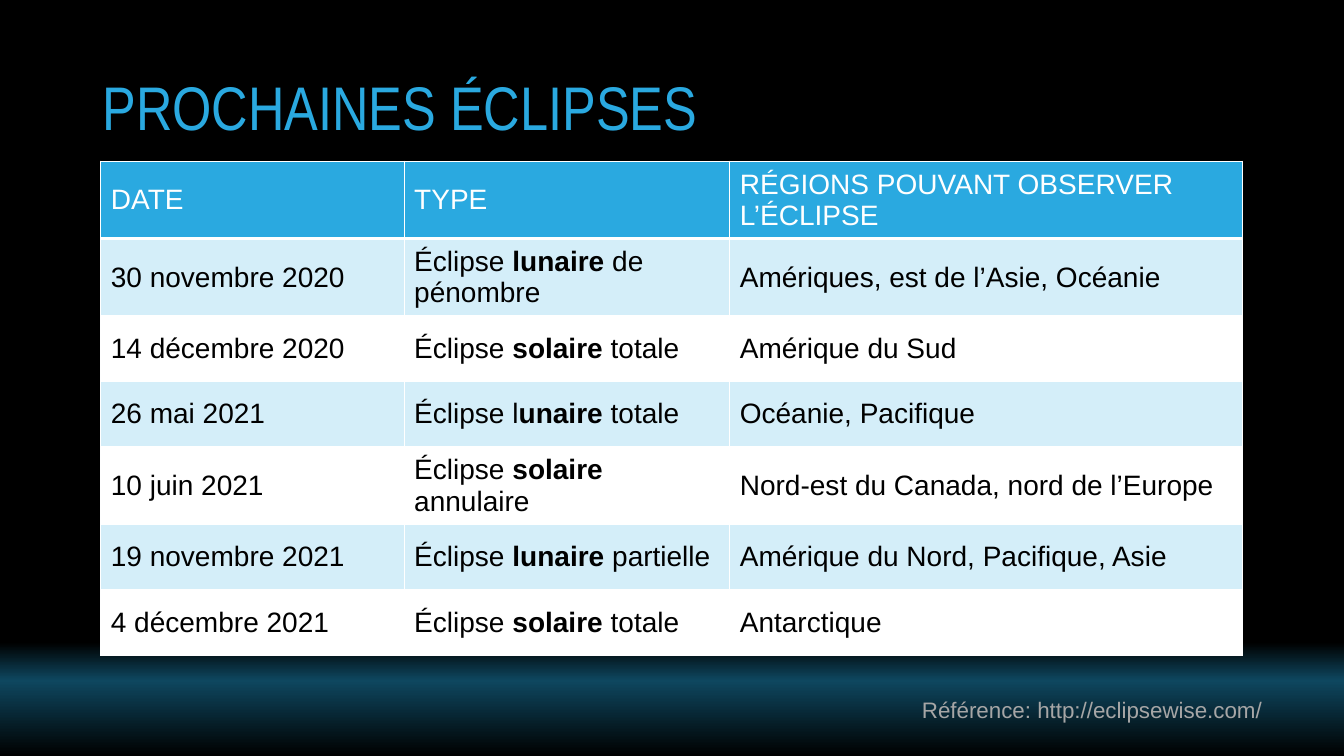
import copy

import pptx
import pptx.dml.color
import pptx.enum.text
import pptx.oxml
import pptx.oxml.ns
import pptx.util

Pt = pptx.util.Pt
RGBColor = pptx.dml.color.RGBColor
PP_ALIGN = pptx.enum.text.PP_ALIGN
MSO_ANCHOR = pptx.enum.text.MSO_ANCHOR
MSO_AUTO_SIZE = pptx.enum.text.MSO_AUTO_SIZE

BLACK = RGBColor(0x00, 0x00, 0x00)
WHITE = RGBColor(0xFF, 0xFF, 0xFF)
NIGHT_BLUE = RGBColor(0x0E, 0x47, 0x5F)
SKY_BLUE = RGBColor(0x2A, 0xA9, 0xE0)
PALE_BLUE = RGBColor(0xD4, 0xEE, 0xF9)
GREY = RGBColor(0xA6, 0xA6, 0xA6)

HORIZON = [(0.85, BLACK), (0.9, NIGHT_BLUE), (1, BLACK)]
COLUMN_WIDTHS = [216.7, 232.6, 366.5]
ROW_HEIGHTS = [32.4] * 2 + [46.8] * 5

# Asterisks enclose the bold part of a cell.
ECLIPSES = [
    ("DATE", "TYPE", "RÉGIONS POUVANT OBSERVER L’ÉCLIPSE"),
    ("30 novembre 2020", "Éclipse *lunaire* de pénombre", "Amériques, est de l’Asie, Océanie"),
    ("14 décembre 2020", "Éclipse *solaire* totale", "Amérique du Sud"),
    ("26 mai 2021", "Éclipse l*unaire* totale", "Océanie, Pacifique"),
    ("10 juin 2021", "Éclipse *solaire* annulaire", "Nord-est du Canada, nord de l’Europe"),
    ("19 novembre 2021", "Éclipse *lunaire* partielle", "Amérique du Nord, Pacifique, Asie"),
    ("4 décembre 2021", "Éclipse *solaire* totale", "Antarctique"),
]


class SlideBuilder:
    """Holds the fonts and the slide being filled."""

    title_font = "Arial Narrow"
    text_font = "Arial"

    def __init__(self, slide):
        self.slide = slide

    def style(self, run, size, color, name=None, bold=False):
        run.font.name = name or self.text_font
        run.font.size = Pt(size)
        run.font.bold = bold
        run.font.color.rgb = color

    def background(self, stops):
        """Fill the background from top to bottom with (position, colour) stops."""
        fill = self.slide.background.fill
        fill.gradient()
        fill.gradient_angle = 270
        stop_list = self.slide.element.xpath(".//a:gsLst")[0]
        while len(stop_list) < len(stops):
            stop_list.append(copy.deepcopy(stop_list[0]))
        for stop, (position, color) in zip(fill.gradient_stops, stops):
            stop.position = position
            stop.color.rgb = color

    def title(self, text, left, top, width, height):
        shape = self.slide.shapes.title
        shape.left, shape.top = Pt(left), Pt(top)
        shape.width, shape.height = Pt(width), Pt(height)
        frame = shape.text_frame
        frame.text = text
        frame.auto_size = MSO_AUTO_SIZE.NONE
        frame.vertical_anchor = MSO_ANCHOR.MIDDLE
        paragraph = frame.paragraphs[0]
        paragraph.alignment = PP_ALIGN.LEFT
        paragraph.line_spacing = 0.9
        self.style(paragraph.runs[0], 44, SKY_BLUE, self.title_font)

    def reference(self, text, left, top, width, height):
        shape = self.slide.shapes.add_textbox(Pt(left), Pt(top), Pt(width), Pt(height))
        frame = shape.text_frame
        frame.word_wrap = True
        frame.text = text
        paragraph = frame.paragraphs[0]
        paragraph.alignment = PP_ALIGN.RIGHT
        self.style(paragraph.runs[0], 16, GREY)

    def table(self, rows, left, top, column_widths, row_heights):
        shape = self.slide.shapes.add_table(
            len(rows), len(column_widths), Pt(left), Pt(top),
            Pt(sum(column_widths)), Pt(sum(row_heights)))
        table = shape.table
        for column, width in zip(table.columns, column_widths):
            column.width = Pt(width)
        for row, height in zip(table.rows, row_heights):
            row.height = Pt(height)
        for row_index, texts in enumerate(rows):
            header = row_index == 0
            band = PALE_BLUE if row_index % 2 else WHITE
            for column_index, text in enumerate(texts):
                cell = table.cell(row_index, column_index)
                self.cell_text(cell, text, WHITE if header else BLACK)
                self.cell_borders(cell, bottom_width=3 if header else 1)
                cell.fill.solid()
                cell.fill.fore_color.rgb = SKY_BLUE if header else band

    def cell_text(self, cell, text, color):
        cell.vertical_anchor = MSO_ANCHOR.MIDDLE
        paragraph = cell.text_frame.paragraphs[0]
        for index, part in enumerate(text.split("*")):
            run = paragraph.add_run()
            run.text = part
            self.style(run, 20, color, bold=index % 2 == 1)

    def cell_borders(self, cell, bottom_width):
        properties = cell._tc.get_or_add_tcPr()
        for side, width in (("L", 1), ("R", 1), ("T", 1), ("B", bottom_width)):
            properties.append(pptx.oxml.parse_xml(
                f'<a:ln{side} {pptx.oxml.ns.nsdecls("a")} w="{Pt(width)}">'
                f'<a:solidFill><a:srgbClr val="{WHITE}"/></a:solidFill></a:ln{side}>'))


def main():
    presentation = pptx.Presentation()
    presentation.slide_width, presentation.slide_height = Pt(960), Pt(540)
    title_only = presentation.slide_layouts[5]
    builder = SlideBuilder(presentation.slides.add_slide(title_only))
    builder.background(HORIZON)
    builder.title("PROCHAINES ÉCLIPSES", 66, 26.6, 828, 104.4)
    builder.reference("Référence: http://eclipsewise.com/", 229, 494, 679.6, 39.6)
    builder.table(ECLIPSES, 72, 115.2, COLUMN_WIDTHS, ROW_HEIGHTS)
    presentation.save("out.pptx")


if __name__ == "__main__":
    main()
